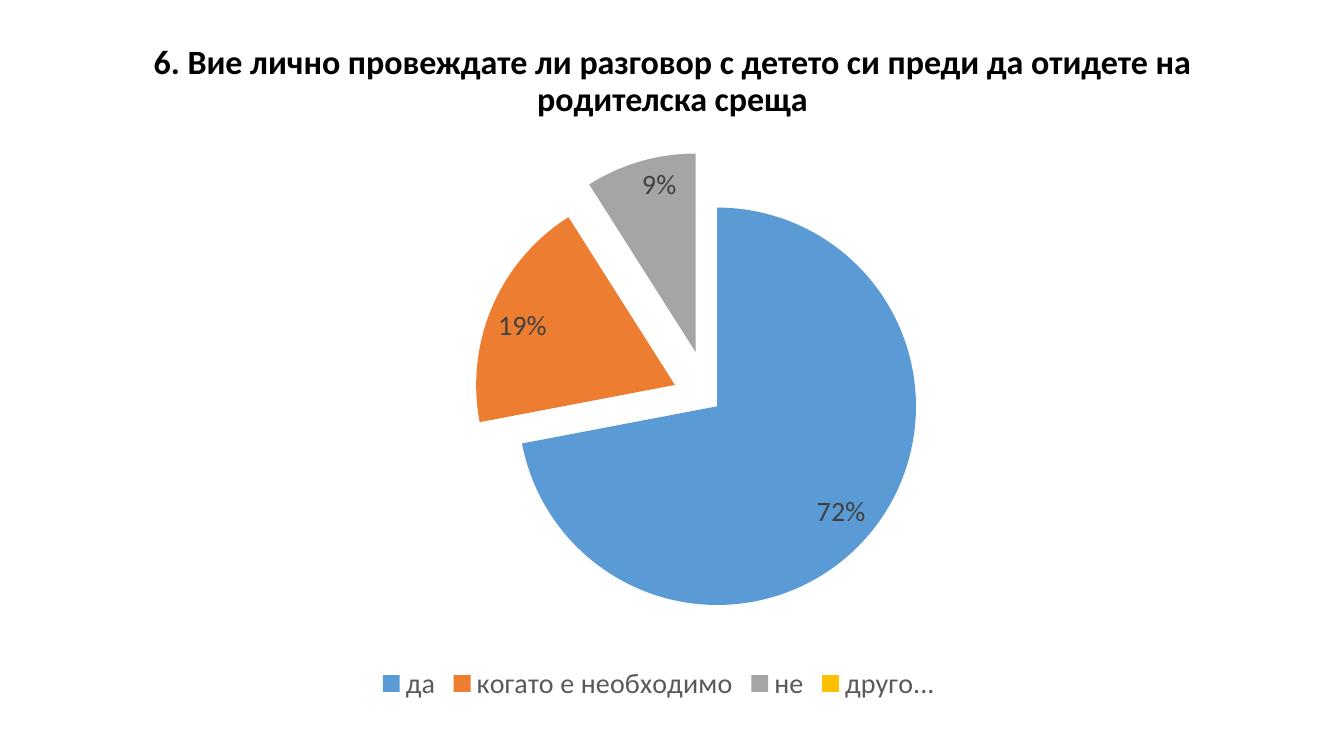
from lxml import etree
from pptx import Presentation
from pptx.chart.data import CategoryChartData
from pptx.dml.color import RGBColor
from pptx.enum.chart import XL_CHART_TYPE, XL_LABEL_POSITION, XL_LEGEND_POSITION
from pptx.enum.text import MSO_ANCHOR, PP_ALIGN
from pptx.oxml.ns import qn
from pptx.util import Pt

PIE = XL_CHART_TYPE.PIE
LEGEND_BOTTOM = XL_LEGEND_POSITION.BOTTOM
INSIDE_END = XL_LABEL_POSITION.INSIDE_END
CENTER = PP_ALIGN.CENTER
TOP = MSO_ANCHOR.TOP

EMU_PER_PX = 9144  # 100 px to the inch
TITLE_ONLY = 5

TITLE = "6. Вие лично провеждате ли разговор с детето си преди да отидете на родителска среща"
# answer, share, colour, explosion in percent
ANSWERS = [
    ("да", 0.72, "5B9BD5", 5),
    ("когато е необходимо", 0.19, "ED7D31", 19),
    ("не", 0.09, "A5A5A5", 25),
    ("друго...", 0, "FFC000", 5),
]
PLOT_AREA = {"x": 0.093, "y": 0.074, "w": 0.897, "h": 0.75}


def px(length):
    return length * EMU_PER_PX


def color(hex_string):
    return RGBColor.from_string(hex_string)


class SlideBuilder:
    font_name = "Calibri"

    def __init__(self, presentation):
        self.slide = presentation.slides.add_slide(presentation.slide_layouts[TITLE_ONLY])

    def style_font(self, font, size, hex_string, bold=False):
        font.name = self.font_name
        font.size = Pt(size)
        font.bold = bold
        font.color.rgb = color(hex_string)

    def title(self, text, left, top, width, height):
        shape = self.slide.shapes.title
        shape.left, shape.top = px(left), px(top)
        shape.width, shape.height = px(width), px(height)
        frame = shape.text_frame
        frame.word_wrap = True
        frame.vertical_anchor = TOP
        paragraph = frame.paragraphs[0]
        paragraph.alignment = CENTER
        paragraph.line_spacing = 0.9
        run = paragraph.add_run()
        run.text = text
        self.style_font(run.font, 24.3, "000000", bold=True)

    def pie(self, answers, left, top, width, height):
        data = CategoryChartData(number_format="0%")
        data.categories = [name for name, *_ in answers]
        data.add_series("Series 1", [share for _, share, *_ in answers])
        chart = self.slide.shapes.add_chart(
            PIE, px(left), px(top), px(width), px(height), data).chart
        self.style_font(chart.font, 10, "000000")
        chart.has_title = False

        # Legend
        chart.has_legend = True
        chart.legend.position = LEGEND_BOTTOM
        chart.legend.include_in_layout = False
        self.style_font(chart.legend.font, 20, "595959")

        # Slices
        plot = chart.plots[0]
        plot.vary_by_categories = True
        series = plot.series[0]
        for index, (_, _, fill, explosion) in enumerate(answers):
            point_format = series.points[index].format
            point_format.fill.solid()
            point_format.fill.fore_color.rgb = color(fill)
            point_format.line.fill.background()
        points = series._element.findall(qn("c:dPt"))
        for point, (*_, explosion) in zip(points, answers):
            element = etree.Element(qn("c:explosion"), val=str(explosion))
            point.find(qn("c:spPr")).addprevious(element)
        points[0].addprevious(etree.Element(qn("c:explosion"), val="5"))

        # Labels, none for an empty slice
        labels = series.data_labels
        labels.show_value = True
        labels.show_percentage = False
        labels.number_format = "0%;;"
        labels.number_format_is_linked = False
        labels.position = INSIDE_END
        self.style_font(labels.font, 20, "404040")
        self.place_plot(chart)

    def place_plot(self, chart):
        plot_area = chart._chartSpace.chart.plotArea
        for layout in plot_area.findall(qn("c:layout")):
            plot_area.remove(layout)
        layout = etree.Element(qn("c:layout"))
        plot_area.insert(0, layout)
        manual = etree.SubElement(layout, qn("c:manualLayout"))
        etree.SubElement(manual, qn("c:layoutTarget"), val="inner")
        for side in ("x", "y"):
            etree.SubElement(manual, qn(f"c:{side}Mode"), val="edge")
        for side, value in PLOT_AREA.items():
            etree.SubElement(manual, qn(f"c:{side}"), val=str(value))


def main():
    presentation = Presentation()
    presentation.slide_width = px(1333)
    presentation.slide_height = px(750)
    builder = SlideBuilder(presentation)
    builder.title(TITLE, left=92, top=40, width=1150, height=145)
    builder.pie(ANSWERS, left=47, top=149, width=1213, height=552)
    presentation.save("out.pptx")


if __name__ == "__main__":
    main()
